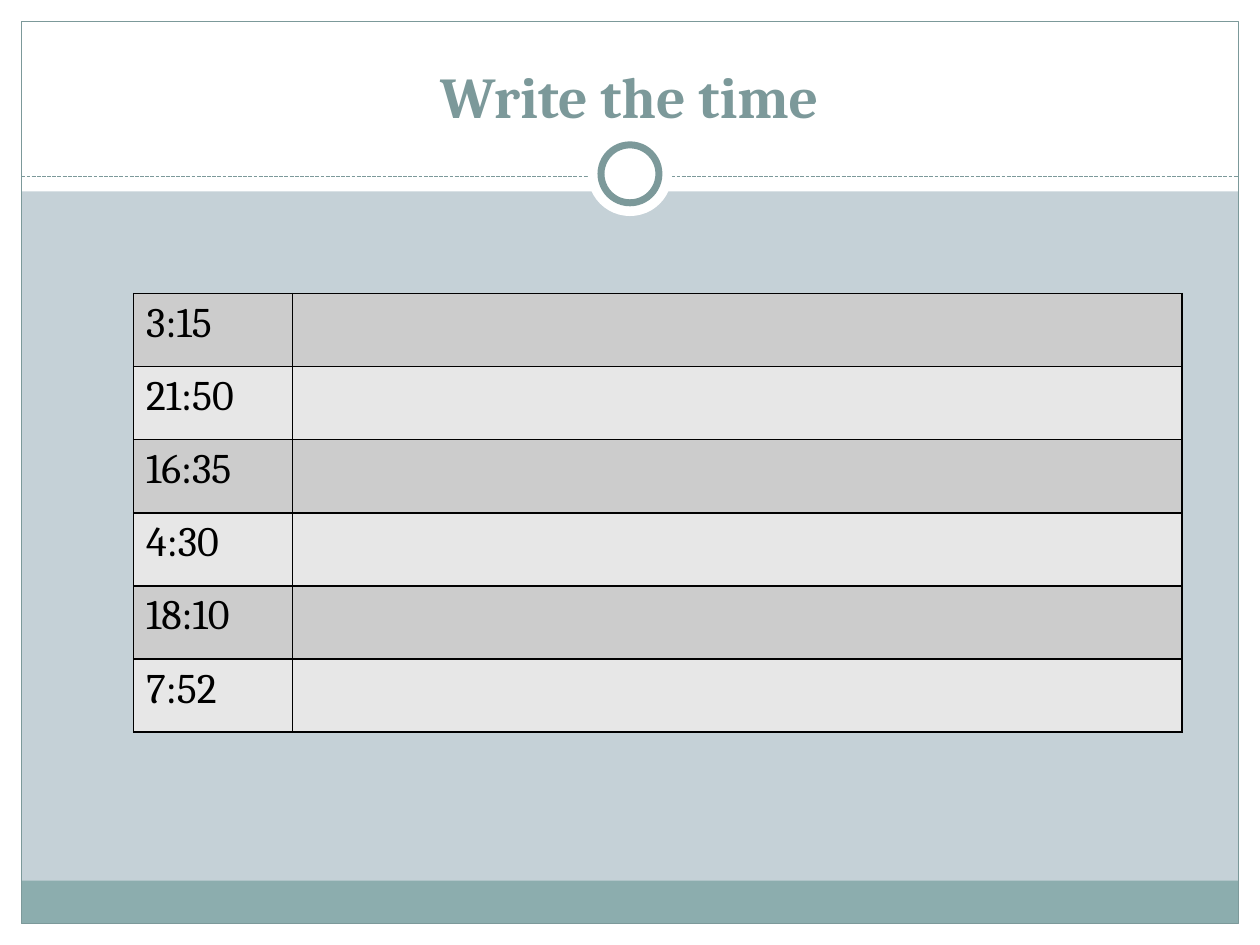
from dataclasses import dataclass

from lxml import etree
from pptx import Presentation, util as u
from pptx.dml.color import RGBColor
from pptx.enum import dml, shapes, text
from pptx.oxml import ns


@dataclass(frozen=True)
class Theme:
    font: str = "Cambria"
    title_size: float = 33
    time_size: float = 24
    backdrop: str = "C5D1D7"
    paper: str = "FFFFFF"
    accent: str = "7C999A"
    footer: str = "8CADAE"
    ink: str = "000000"
    bands: tuple = ("CCCCCC", "E7E7E7")
    hairline: float = 0.75
    ring: float = 4
    grid: float = 1


THEME = Theme()
WIDTH, HEIGHT = 10, 7.5
MARGIN = 0.17
HEADER = 1.52
FOOTER = 0.34
RULE_Y = 1.4
RING_Y = 1.38
TIMES = ("3:15", "21:50", "16:35", "4:30", "18:10", "7:52")
COLUMNS = (1.26, 7.06)
ROW = 0.58


def color(value):
    return RGBColor.from_string(value)


def add_panel(slide, box, fill=None, line=None, weight=THEME.hairline,
              kind=shapes.MSO_SHAPE.RECTANGLE):
    panel = slide.shapes.add_shape(kind, *map(u.Inches, box))
    panel.shadow.inherit = False
    if fill:
        panel.fill.solid()
        panel.fill.fore_color.rgb = color(fill)
    else:
        panel.fill.background()
    if line:
        panel.line.color.rgb = color(line)
        panel.line.width = u.Pt(weight)
    else:
        panel.line.fill.background()


def add_circle(slide, diameter, line=None):
    box = (WIDTH / 2 - diameter / 2, RING_Y - diameter / 2, diameter, diameter)
    add_panel(slide, box, THEME.paper, line, THEME.ring, shapes.MSO_SHAPE.OVAL)


def add_dashed_rule(slide):
    ends = (MARGIN, RULE_Y, WIDTH - MARGIN, RULE_Y)
    rule = slide.shapes.add_connector(shapes.MSO_CONNECTOR.STRAIGHT, *map(u.Inches, ends))
    rule.line.color.rgb = color(THEME.accent)
    rule.line.width = u.Pt(THEME.hairline)
    rule.line.dash_style = dml.MSO_LINE.SQUARE_DOT
    etree.SubElement(rule.element.spPr, ns.qn("a:effectLst"))


def add_frame(slide):
    inner = WIDTH - 2 * MARGIN
    margins = (
        (0, HEIGHT - MARGIN, WIDTH, MARGIN),
        (0, 0, WIDTH, HEADER),
        (0, 0, MARGIN, HEIGHT),
        (WIDTH - MARGIN, 0, MARGIN, HEIGHT),
    )
    for box in margins:
        add_panel(slide, box, THEME.paper)
    add_panel(slide, (MARGIN, HEIGHT - MARGIN - FOOTER, inner, FOOTER), THEME.footer)
    add_panel(slide, (MARGIN, MARGIN, inner, HEIGHT - 2 * MARGIN), line=THEME.accent)
    add_dashed_rule(slide)
    add_circle(slide, 0.67)
    add_circle(slide, 0.46, THEME.accent)


def style_font(font, size, ink, bold=False):
    font.name = THEME.font
    font.size = u.Pt(size)
    font.bold = bold
    font.color.rgb = color(ink)


def add_title(slide, wording):
    title = slide.shapes.title
    slide.shapes.element.append(title.element)
    title.left, title.top, title.width, title.height = map(u.Inches, (0.33, 0.25, 9.33, 0.83))
    title.text_frame.text = wording
    title.text_frame.vertical_anchor = text.MSO_ANCHOR.BOTTOM
    heading = title.text_frame.paragraphs[0]
    heading.alignment = text.PP_ALIGN.CENTER
    style_font(heading.font, THEME.title_size, THEME.accent, bold=True)


def outline_cell(cell):
    properties = cell._tc.get_or_add_tcPr()
    for side in ("lnL", "lnR", "lnT", "lnB"):
        border = etree.SubElement(properties, ns.qn(f"a:{side}"), w=str(u.Pt(THEME.grid)))
        fill = etree.SubElement(border, ns.qn("a:solidFill"))
        etree.SubElement(fill, ns.qn("a:srgbClr"), val=THEME.ink)


def add_time_table(slide):
    box = (1.06, 2.33, sum(COLUMNS), ROW * len(TIMES))
    table = slide.shapes.add_table(len(TIMES), len(COLUMNS), *map(u.Inches, box)).table
    table.first_row = False
    table.horz_banding = False
    for column, width in zip(table.columns, COLUMNS):
        column.width = u.Inches(width)
    for index, time in enumerate(TIMES):
        table.cell(index, 0).text = time
        for cell in table.rows[index].cells:
            outline_cell(cell)
            cell.fill.solid()
            cell.fill.fore_color.rgb = color(THEME.bands[index % 2])
            style_font(cell.text_frame.paragraphs[0].font, THEME.time_size, THEME.ink)


def main():
    deck = Presentation()
    deck.slide_width, deck.slide_height = u.Inches(WIDTH), u.Inches(HEIGHT)
    slide = deck.slides.add_slide(deck.slide_layouts[5])
    slide.background.fill.solid()
    slide.background.fill.fore_color.rgb = color(THEME.backdrop)
    add_frame(slide)
    add_title(slide, "Write the time")
    add_time_table(slide)
    deck.save("out.pptx")


if __name__ == "__main__":
    main()
